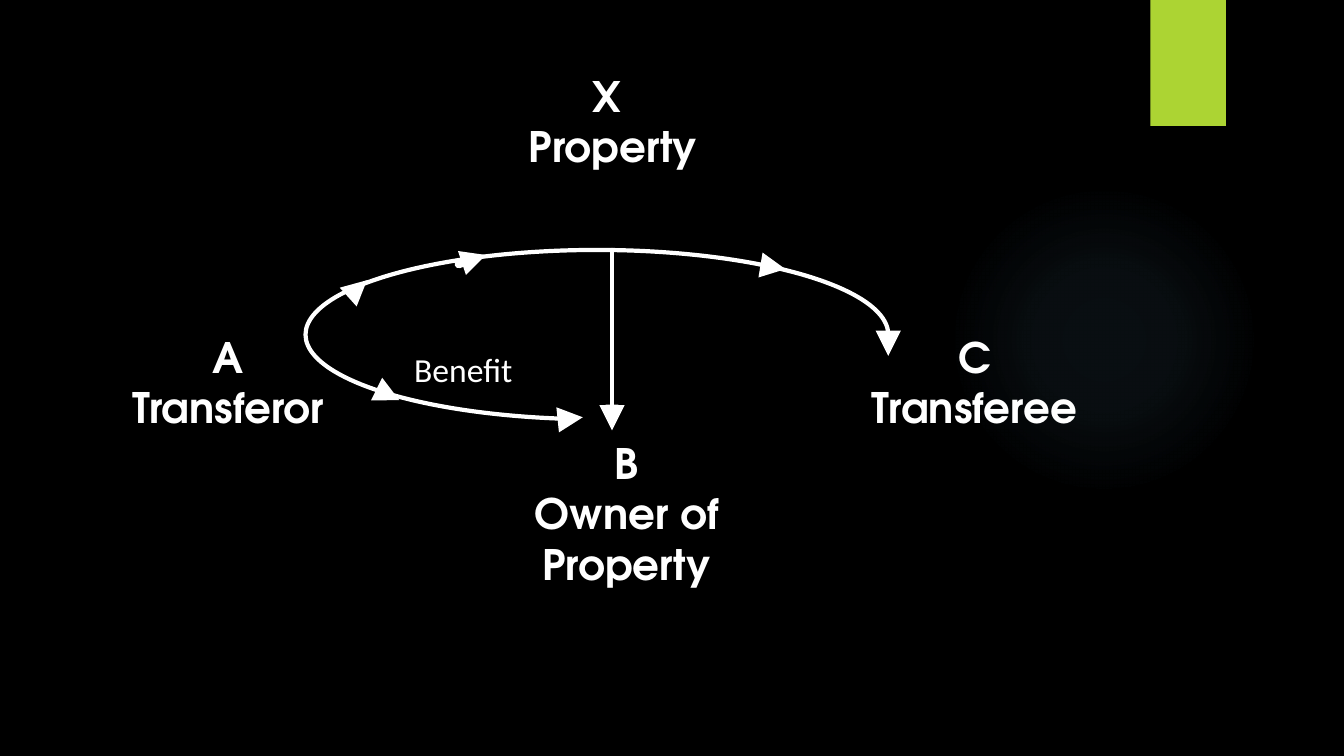
"""Build the slide that shows transferor A, owner B and transferee C around property X."""
from dataclasses import dataclass

import lxml.etree
import pptx
import pptx.dml.color
import pptx.enum.shapes
import pptx.enum.text
import pptx.oxml
import pptx.oxml.ns
import pptx.shapes.autoshape
import pptx.slide
import pptx.util

Inches = pptx.util.Inches
Pt = pptx.util.Pt
RGB = pptx.dml.color.RGBColor
qn = pptx.oxml.ns.qn
Shape = pptx.enum.shapes.MSO_SHAPE
Align = pptx.enum.text.PP_ALIGN


@dataclass(frozen=True)
class Theme:
    background: RGB = RGB(0x00, 0x00, 0x00)
    ink: RGB = RGB(0xFF, 0xFF, 0xFF)
    accent: RGB = RGB(0xAC, 0xD4, 0x33)
    glow: str = "7AC4F0"
    party_font: str = "TeX Gyre Adventor"
    note_font: str = "Calibri"
    party_size: int = 30
    note_size: int = 24
    thin: int = 3
    thick: int = 6


@dataclass(frozen=True)
class Box:
    left: float
    top: float
    width: float
    height: float

    def lengths(self) -> list[int]:
        return [Inches(v) for v in (self.left, self.top, self.width, self.height)]


@dataclass(frozen=True)
class Party:
    box: Box
    lines: tuple[str, ...]


@dataclass(frozen=True)
class Arrow:
    x1: float
    y1: float
    x2: float
    y2: float
    width: int


THEME = Theme()

PARTIES = (
    Party(Box(4.8, 0.65, 2.56, 1.11), ("X ", "Property")),
    Party(Box(0.69, 3.24, 3.15, 1.62), ("A", "Transferor")),
    Party(Box(8.09, 3.24, 3.15, 1.62), ("C", "Transferee")),
    Party(Box(4.64, 4.29, 3.15, 2.38), ("B", "Owner of Property")),
)

ARROWS = (
    Arrow(8.81, 3.48, 8.81, 3.53, THEME.thick),
    Arrow(7.67, 2.65, 7.79, 2.67, THEME.thick),
    Arrow(4.55, 2.62, 4.82, 2.53, THEME.thick),
    Arrow(3.54, 2.87, 3.64, 2.78, THEME.thick),
    Arrow(5.68, 4.15, 5.78, 4.14, THEME.thick),
    Arrow(3.94, 3.96, 3.96, 3.97, THEME.thick),
    Arrow(6.07, 2.48, 6.07, 4.14, THEME.thin),
    Arrow(6.07, 4.05, 6.07, 4.27, THEME.thick),
)


def add_text(s: pptx.slide.Slide, box: Box, lines: tuple[str, ...], *, font: str,
             size: int, bold: bool = False, align: Align = Align.LEFT,
             spacing: float = 1.0) -> None:
    tf = s.shapes.add_textbox(*box.lengths()).text_frame
    tf.word_wrap = True
    for i, line in enumerate(lines):
        p = tf.paragraphs[0] if i == 0 else tf.add_paragraph()
        p.alignment = align
        p.line_spacing = spacing
        r = p.add_run()
        r.text = line
        r.font.name = font
        r.font.size = Pt(size)
        r.font.bold = bold
        r.font.color.rgb = THEME.ink


def add_shape(s: pptx.slide.Slide, kind: Shape, box: Box) -> pptx.shapes.autoshape.Shape:
    sp = s.shapes.add_shape(kind, *box.lengths())
    sp.shadow.inherit = False
    sp.fill.background()
    sp.line.fill.background()
    return sp


def add_glow(s: pptx.slide.Slide, box: Box) -> None:
    sp = add_shape(s, Shape.OVAL, box)
    stops = "".join(
        f'<a:gs pos="{pos * 1000}"><a:srgbClr val="{THEME.glow}">'
        f'<a:alpha val="{alpha * 1000}"/></a:srgbClr></a:gs>'
        for pos, alpha in ((0, 7), (36, 6), (69, 0))
    )
    gradient = pptx.oxml.parse_xml(
        f'<a:gradFill {pptx.oxml.ns.nsdecls("a")} rotWithShape="1"><a:gsLst>{stops}</a:gsLst>'
        '<a:path path="circle"><a:fillToRect l="50000" t="50000" r="50000" b="50000"/>'
        '</a:path></a:gradFill>'
    )
    props = sp._element.spPr
    props.replace(props.find(qn("a:noFill")), gradient)


def add_arrow(s: pptx.slide.Slide, arrow: Arrow) -> None:
    ends = [Inches(v) for v in (arrow.x1, arrow.y1, arrow.x2, arrow.y2)]
    line = s.shapes.add_connector(pptx.enum.shapes.MSO_CONNECTOR.STRAIGHT, *ends)
    line.line.color.rgb = THEME.ink
    line.line.width = Pt(arrow.width)
    props = line._element.spPr
    ln = props.find(qn("a:ln"))
    ln.set("cap", "rnd")
    lxml.etree.SubElement(ln, qn("a:tailEnd"), type="triangle")
    lxml.etree.SubElement(props, qn("a:effectLst"))


def main() -> None:
    prs = pptx.Presentation()
    prs.slide_width, prs.slide_height = Inches(13.33), Inches(7.5)
    s = prs.slides.add_slide(prs.slide_layouts[6])
    s.background.fill.solid()
    s.background.fill.fore_color.rgb = THEME.background

    add_glow(s, Box(9.41, 1.83, 3.08, 3.08))
    tab = add_shape(s, Shape.RECTANGLE, Box(11.41, 0, 0.75, 1.25))
    tab.fill.solid()
    tab.fill.fore_color.rgb = THEME.accent

    for party in PARTIES:
        add_text(s, party.box, party.lines, font=THEME.party_font,
                 size=THEME.party_size, bold=True, align=Align.CENTER)

    arc = add_shape(s, Shape.ARC, Box(3.03, 2.48, 5.78, 1.68))
    arc.adjustments[0] = 64.07
    arc.adjustments[1] = 0
    arc.line.color.rgb = THEME.ink
    arc.line.width = Pt(THEME.thin)

    for arrow in ARROWS:
        add_arrow(s, arrow)

    add_text(s, Box(4.01, 3.38, 1.28, 0.51), ("Benefit",), font=THEME.note_font,
             size=THEME.note_size, spacing=1.07)
    prs.save("out.pptx")


if __name__ == "__main__":
    main()
